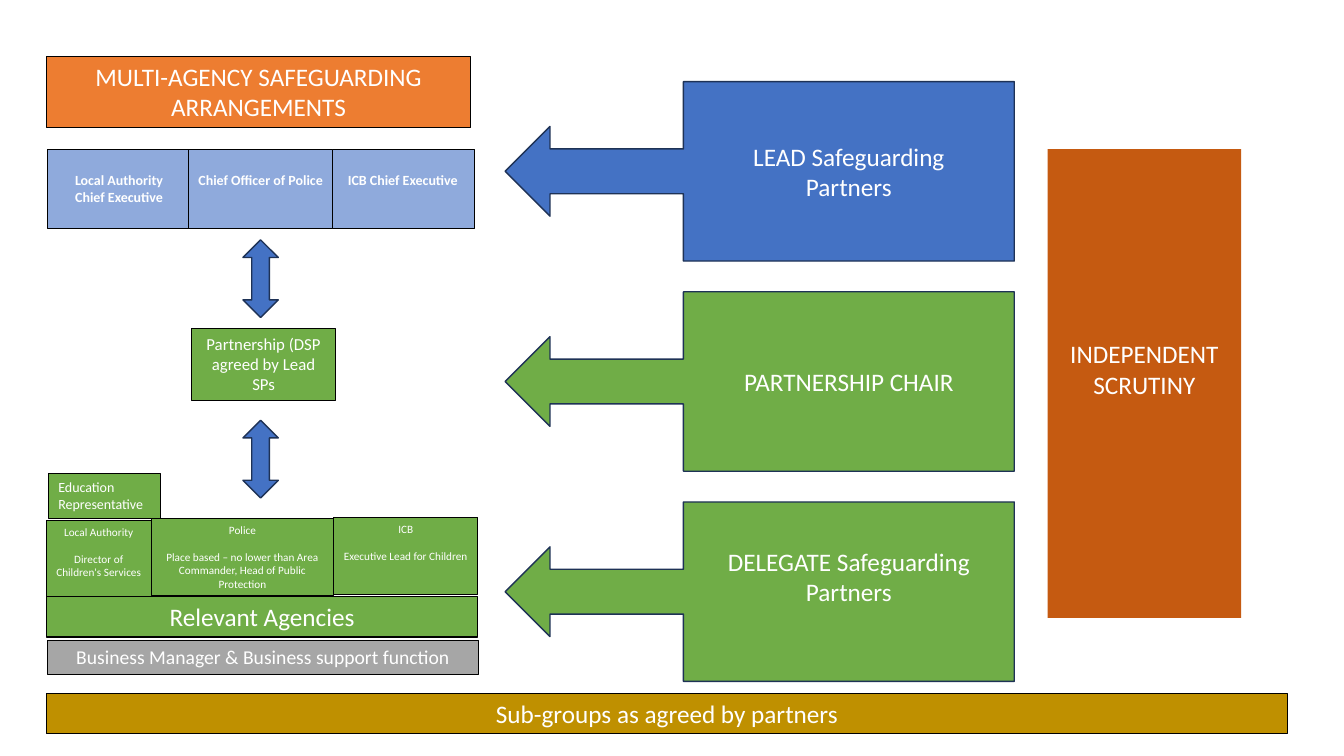
from dataclasses import dataclass

import pptx
import pptx.dml.color
import pptx.enum.shapes
import pptx.enum.text
import pptx.util

Inches = pptx.util.Inches
Pt = pptx.util.Pt
ShapeKind = pptx.enum.shapes.MSO_SHAPE
Align = pptx.enum.text.PP_ALIGN
Anchor = pptx.enum.text.MSO_ANCHOR

COLORS = {
    "white": "FFFFFF",
    "black": "000000",
    "navy": "1E3256",
    "blue": "4472C4",
    "light blue": "8FAADC",
    "green": "70AD47",
    "orange": "ED7D31",
    "rust": "C55A11",
    "gold": "BF9000",
    "gray": "A6A6A6",
}
FONT_NAME = "Calibri"
INSET = 0.05


@dataclass(frozen=True)
class Block:
    """A filled shape with text; lengths in inches, text and gaps in points."""

    left: float
    top: float
    width: float
    height: float
    fill: str
    lines: tuple[str, ...] = ()
    size: float = 18
    bold: bool = False
    align: Align = Align.CENTER
    anchor: Anchor = Anchor.TOP
    inset_top: float = INSET
    inset_bottom: float = INSET
    gap: float = 0
    kind: ShapeKind = ShapeKind.RECTANGLE
    line: str | None = "black"
    line_width: float = 0.75


def rgb(name: str) -> pptx.dml.color.RGBColor:
    return pptx.dml.color.RGBColor.from_string(COLORS[name])


def set_formats(target: object, formats: dict[str, object]) -> None:
    for name, value in formats.items():
        setattr(target, name, value)


def write_text(shape: pptx.shapes.autoshape.Shape, block: Block) -> None:
    frame = shape.text_frame
    set_formats(frame, {
        "word_wrap": True,
        "vertical_anchor": block.anchor,
        "margin_top": Inches(block.inset_top),
        "margin_bottom": Inches(block.inset_bottom),
    })
    for index, text in enumerate(block.lines):
        paragraph = frame.add_paragraph() if index else frame.paragraphs[0]
        set_formats(paragraph, {
            "alignment": block.align,
            "space_before": Pt(block.gap if index else 0),
        })
        run = paragraph.add_run()
        run.text = text
        set_formats(run.font, {
            "name": FONT_NAME,
            "size": Pt(block.size),
            "bold": block.bold,
        })
        run.font.color.rgb = rgb("white")


def draw_block(slide: pptx.slide.Slide, block: Block) -> None:
    shape = slide.shapes.add_shape(
        block.kind,
        Inches(block.left), Inches(block.top),
        Inches(block.width), Inches(block.height),
    )
    shape.shadow.inherit = False
    shape.fill.solid()
    shape.fill.fore_color.rgb = rgb(block.fill)
    if block.line:
        shape.line.color.rgb = rgb(block.line)
        shape.line.width = Pt(block.line_width)
    else:
        shape.line.fill.background()
    if block.lines:
        write_text(shape, block)


def lead_partner(left: float, width: float, *lines: str) -> Block:
    return Block(left, 1.48, width, 0.79, "light blue", lines, 10, bold=True, inset_top=0.22)


def delegate(left: float, top: float, width: float, height: float, *lines: str) -> Block:
    return Block(left, top, width, height, "green", lines, 8, gap=9.8)


def callout(row: int, fill: str, *lines: str, inset_bottom: float = INSET) -> Block:
    return Block(5.01, 0.81 + row * 2.085, 5.05, 1.78, fill, lines,
                 anchor=Anchor.MIDDLE, inset_bottom=inset_bottom,
                 kind=ShapeKind.LEFT_ARROW_CALLOUT, line="navy", line_width=1)


def link_arrow(top: float) -> Block:
    return Block(2.41, top, 0.35, 0.77, "blue",
                 kind=ShapeKind.UP_DOWN_ARROW, line="navy", line_width=1)


BLOCKS = [
    Block(0.46, 0.56, 4.21, 0.71, "orange", ("MULTI-AGENCY SAFEGUARDING ARRANGEMENTS",)),
    lead_partner(0.47, 1.42, "Local Authority", "Chief Executive"),
    lead_partner(3.28, 1.43, "ICB Chief Executive"),
    lead_partner(1.87, 1.43, "Chief Officer of Police"),
    delegate(0.46, 5.16, 1.04, 0.91, "Local Authority", "Director of Children's Services"),
    delegate(1.5, 5.14, 1.81, 0.77, "Police",
             "Place based – no lower than Area Commander, Head of Public Protection"),
    delegate(3.31, 5.13, 1.43, 0.77, "ICB", "Executive Lead for Children"),
    Block(0.46, 6.88, 12.31, 0.4, "gold", ("Sub-groups as agreed by partners",)),
    Block(1.9, 3.26, 1.43, 0.71, "green", ("Partnership (DSP agreed by Lead SPs",), 12),
    Block(0.48, 4.7, 1.11, 0.44, "green", ("Education Representative",), 10, align=Align.LEFT),
    Block(0.46, 5.92, 4.28, 0.4, "green", ("Relevant Agencies",)),
    Block(0.47, 6.35, 4.28, 0.34, "gray", ("Business Manager & Business support function",), 14),
    callout(0, "blue", "LEAD Safeguarding", "Partners"),
    callout(1, "green", "PARTNERSHIP CHAIR"),
    callout(2, "green", "DELEGATE Safeguarding Partners", inset_bottom=0.35),
    link_arrow(2.38),
    link_arrow(4.17),
    Block(10.39, 1.48, 1.92, 4.65, "rust", ("INDEPENDENT SCRUTINY",), inset_top=1.88, line=None),
]


def main() -> None:
    presentation = pptx.Presentation()
    set_formats(presentation, {"slide_width": Inches(13.33), "slide_height": Inches(7.5)})
    slide = presentation.slides.add_slide(presentation.slide_layouts[6])
    for block in BLOCKS:
        draw_block(slide, block)
    presentation.save("out.pptx")


if __name__ == "__main__":
    main()
